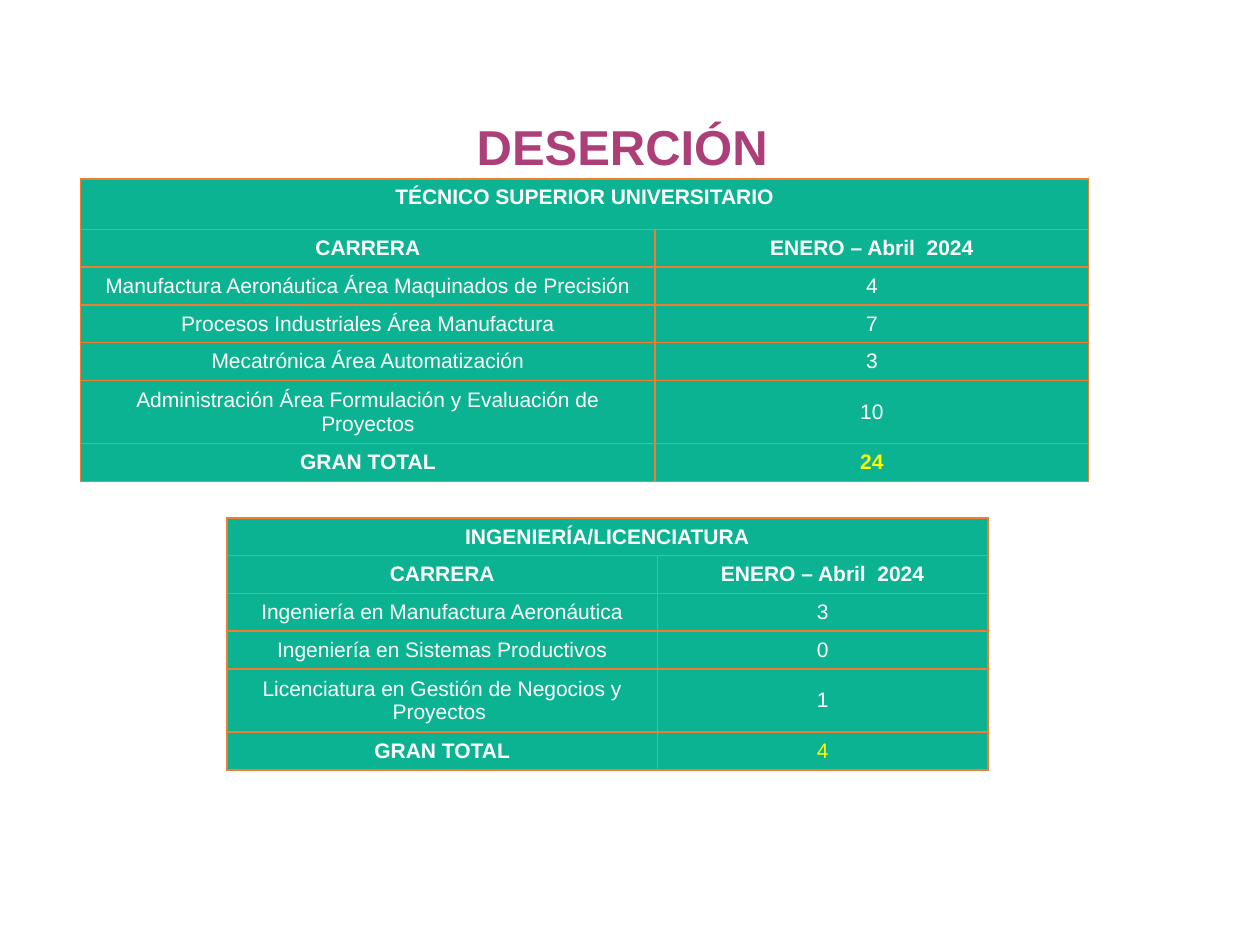
"""Build the DESERCIÓN slide with its two dropout tables."""
from dataclasses import dataclass

from lxml import etree
from pptx import Presentation
from pptx.dml.color import RGBColor
from pptx.enum.text import MSO_ANCHOR, MSO_AUTO_SIZE, PP_ALIGN
from pptx.oxml.ns import qn
from pptx.util import Inches, Pt

CENTER = PP_ALIGN.CENTER
TOP = MSO_ANCHOR.TOP
MIDDLE = MSO_ANCHOR.MIDDLE
NO_AUTOFIT = MSO_AUTO_SIZE.NONE

FONT = "Arial"
COLORS = {
    "title": "AC3E78",
    "space": "000000",
    "cell": "0CB393",
    "border": "ED7D31",
    "text": "FFFFFF",
    "total": "FFFF00",
}
BORDER_SIDES = ("a:lnL", "a:lnR", "a:lnT", "a:lnB")
ROW_HEIGHT = 0.3
TALL_ROW_HEIGHT = 0.5
TITLE_ONLY_LAYOUT = 5


@dataclass(frozen=True)
class DropoutTable:
    heading: str
    heading_height: float
    heading_anchor: MSO_ANCHOR
    left: float
    top: float
    column_widths: tuple[float, float]
    programs: tuple[tuple[str, int], ...]
    bold_total: bool


TABLES = (
    DropoutTable(
        "TÉCNICO SUPERIOR UNIVERSITARIO", 0.4, TOP, 0.64, 1.42, (4.56, 3.44),
        (
            ("Manufactura Aeronáutica Área Maquinados de Precisión", 4),
            ("Procesos Industriales Área Manufactura", 7),
            ("Mecatrónica Área Automatización", 3),
            ("Administración Área Formulación y Evaluación de Proyectos", 10),
        ),
        True,
    ),
    DropoutTable(
        "INGENIERÍA/LICENCIATURA", ROW_HEIGHT, MIDDLE, 1.8, 4.11, (3.42, 2.62),
        (
            ("Ingeniería en Manufactura Aeronáutica", 3),
            ("Ingeniería en Sistemas Productivos", 0),
            ("Licenciatura en Gestión de Negocios y Proyectos ", 1),
        ),
        False,
    ),
)


def add_run(paragraph, text: str, size: float, color: str, bold: bool) -> None:
    """Add one formatted run to a paragraph."""
    run = paragraph.add_run()
    run.text = text
    run.font.name = FONT
    run.font.size = Pt(size)
    run.font.bold = bold
    run.font.color.rgb = RGBColor.from_string(COLORS[color])


def add_borders(cell) -> None:
    """Draw a one-point line on every side of a cell."""
    properties = cell._tc.get_or_add_tcPr()
    for side in BORDER_SIDES:
        line = etree.SubElement(properties, qn(side), w=str(Pt(1)))
        fill = etree.SubElement(line, qn("a:solidFill"))
        etree.SubElement(fill, qn("a:srgbClr"), val=COLORS["border"])


def format_cell(cell) -> None:
    """Give a cell its borders, fill and vertical centring."""
    add_borders(cell)
    cell.fill.solid()
    cell.fill.fore_color.rgb = RGBColor.from_string(COLORS["cell"])
    cell.vertical_anchor = MIDDLE


def write_cell(cell, text: str, bold: bool, color: str = "text") -> None:
    """Write centred text in a cell."""
    paragraph = cell.text_frame.paragraphs[0]
    paragraph.alignment = CENTER
    add_run(paragraph, text, 12, color, bold)


def add_dropout_table(slide, data: DropoutTable) -> None:
    """Add a table of programs with their dropouts and grand total."""
    last = len(data.programs) + 2
    heights = [data.heading_height] + [ROW_HEIGHT] * last
    heights[last - 1] = TALL_ROW_HEIGHT
    table = slide.shapes.add_table(
        last + 1, 2, Inches(data.left), Inches(data.top),
        Inches(sum(data.column_widths)), Inches(sum(heights)),
    ).table
    for column, width in zip(table.columns, data.column_widths):
        column.width = Inches(width)
    for row, height in zip(table.rows, heights):
        row.height = Inches(height)
    for cell in table.iter_cells():
        format_cell(cell)

    heading = table.cell(0, 0)
    heading.merge(table.cell(0, 1))
    heading.vertical_anchor = data.heading_anchor
    write_cell(heading, data.heading, True)
    write_cell(table.cell(1, 0), "CARRERA", True)
    write_cell(table.cell(1, 1), "ENERO – Abril  2024", True)
    for row, (program, dropouts) in enumerate(data.programs, start=2):
        write_cell(table.cell(row, 0), program, False)
        write_cell(table.cell(row, 1), str(dropouts), False)
    total = sum(dropouts for _, dropouts in data.programs)
    write_cell(table.cell(last, 0), "GRAN TOTAL", True)
    write_cell(table.cell(last, 1), str(total), data.bold_total, "total")


def add_title(slide) -> None:
    """Place and write the slide title."""
    title = slide.shapes.title
    title.left, title.top = Inches(2.01), Inches(0.82)
    title.width, title.height = Inches(5.98), Inches(0.64)
    frame = title.text_frame
    frame.auto_size = NO_AUTOFIT
    frame.word_wrap = True
    frame.vertical_anchor = TOP
    paragraph = frame.paragraphs[0]
    paragraph.alignment = CENTER
    add_run(paragraph, "DESERCIÓN", 28, "title", True)
    add_run(paragraph, " ", 32, "space", True)


def main() -> None:
    """Create and save the presentation."""
    presentation = Presentation()
    presentation.slide_width = Inches(10)
    presentation.slide_height = Inches(7.5)
    layout = presentation.slide_layouts[TITLE_ONLY_LAYOUT]
    slide = presentation.slides.add_slide(layout)
    add_title(slide)
    for data in TABLES:
        add_dropout_table(slide, data)
    presentation.save("out.pptx")


if __name__ == "__main__":
    main()
